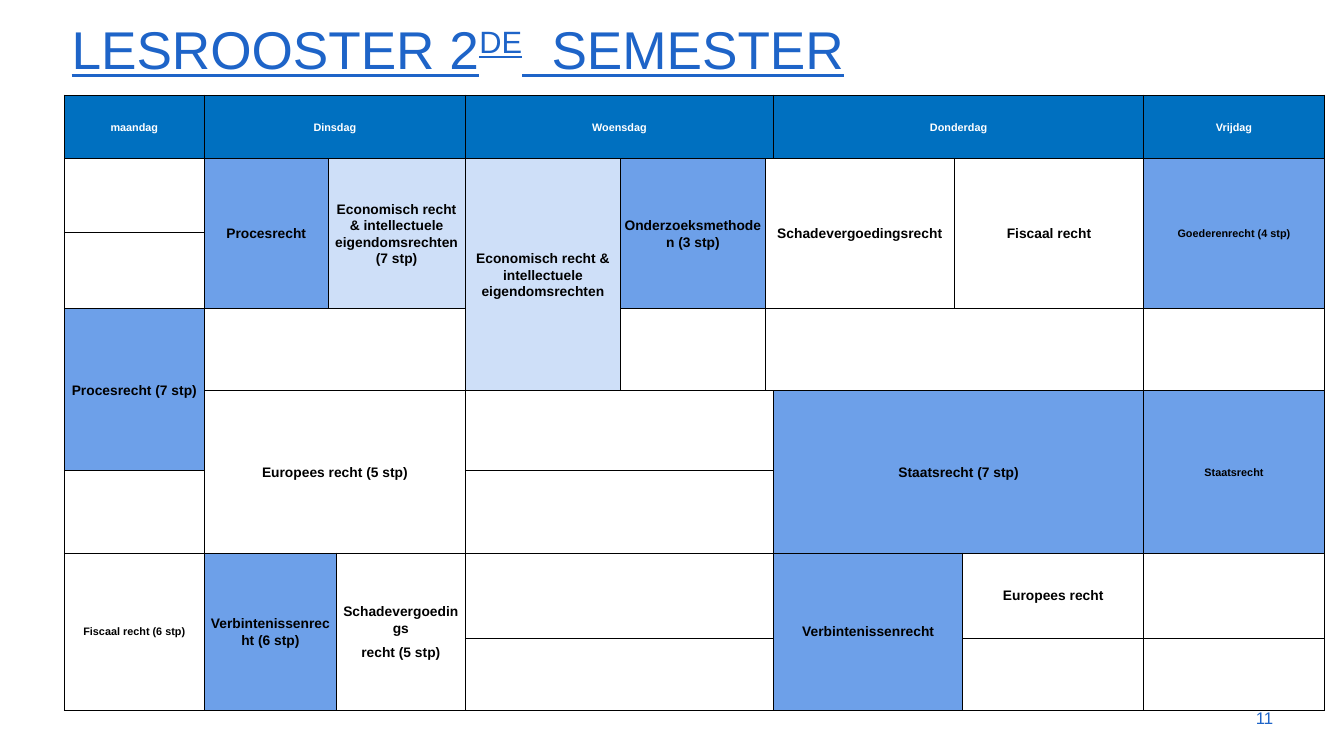
from lxml.etree import SubElement
from pptx import Presentation
from pptx.dml.color import RGBColor
from pptx.enum.text import MSO_ANCHOR, MSO_AUTO_SIZE, PP_ALIGN
from pptx.oxml.ns import qn
from pptx.util import Pt

HEADER_BLUE = RGBColor(0x00, 0x70, 0xC0)
COURSE_BLUE = RGBColor(0x6D, 0xA0, 0xE9)
PALE_BLUE = RGBColor(0xCE, 0xDF, 0xF8)
TITLE_BLUE = RGBColor(0x1E, 0x64, 0xC8)
WHITE = RGBColor(0xFF, 0xFF, 0xFF)
BLACK = RGBColor(0x00, 0x00, 0x00)

TITLE = [("LESROOSTER 2", 0), ("DE", 30), ("  SEMESTER", 0)]
PAGE_NUMBER = "11"

COLUMN_WIDTHS = [142.6, 125.3, 8.6, 131, 157.7, 146.9, 8.6, 183.6, 8.6, 183.6, 183.6]
ROW_HEIGHTS = [64.8, 74.9, 77.4, 83.5, 81.4, 83.5, 86.4, 73.4]

# first column, columns spanned, day
DAYS = [
    (0, 1, "maandag"),
    (1, 3, "Dinsdag"),
    (4, 3, "Woensdag"),
    (7, 3, "Donderdag"),
    (10, 1, "Vrijdag"),
]

# row, column, rows spanned, columns spanned, text, fill (None is clear), text size
COURSES = [
    (1, 1, 2, 1, "Procesrecht", COURSE_BLUE, 14),
    (1, 2, 2, 2, "Economisch recht & intellectuele eigendomsrechten (7 stp)", PALE_BLUE, 14),
    (1, 4, 3, 1, "Economisch recht & intellectuele eigendomsrechten", PALE_BLUE, 14),
    (1, 5, 2, 1, "Onderzoeksmethoden (3 stp)", COURSE_BLUE, 14),
    (1, 6, 2, 2, "Schadevergoedingsrecht", None, 14),
    (1, 8, 2, 2, "Fiscaal recht", None, 14),
    (1, 10, 2, 1, "Goederenrecht (4 stp)", COURSE_BLUE, 11),
    (3, 0, 2, 1, "Procesrecht (7 stp)", COURSE_BLUE, 14),
    (4, 1, 2, 3, "Europees recht (5 stp)", None, 14),
    (4, 7, 2, 3, "Staatsrecht (7 stp)", COURSE_BLUE, 14),
    (4, 10, 2, 1, "Staatsrecht", COURSE_BLUE, 11),
    (6, 0, 2, 1, "Fiscaal recht (6 stp)", None, 11),
    (6, 1, 2, 2, "Verbintenissenrecht (6 stp)", COURSE_BLUE, 14),
    (6, 3, 2, 1, "Schadevergoedings\nrecht (5 stp)", None, 14),
    (6, 7, 2, 2, "Verbintenissenrecht", COURSE_BLUE, 14),
    (6, 9, 1, 1, "Europees recht", None, 14),
]

# row, first column, columns spanned
FREE_SLOTS = [(3, 1, 3), (3, 6, 4)] + [(row, 4, 3) for row in range(4, 8)]


def write(paragraph, text, size, color, bold=False, underline=False,
          baseline=0, align=PP_ALIGN.LEFT, spacing=1.0, after=0):
    paragraph.alignment = align
    paragraph.line_spacing = spacing
    paragraph.space_before = Pt(0)
    paragraph.space_after = Pt(after)
    run = paragraph.add_run()
    run.text = text
    font = run.font
    font.name, font.size, font.bold, font.underline = "Arial", Pt(size), bold, underline
    font.color.rgb = color
    if baseline:
        run._r.get_or_add_rPr().set("baseline", str(baseline * 1000))


def add_borders(cell):
    properties = cell._tc.get_or_add_tcPr()
    for side in ("lnL", "lnR", "lnT", "lnB"):
        line = SubElement(properties, qn(f"a:{side}"), w=str(Pt(1)))
        fill = SubElement(line, qn("a:solidFill"))
        SubElement(fill, qn("a:srgbClr"), val=str(BLACK))


def fill_block(table, row, column, rows, columns, text, fill, size, color=BLACK):
    """Merge the block's cells, colour them and write the text in the middle."""
    cell = table.cell(row, column)
    if rows * columns > 1:
        cell.merge(table.cell(row + rows - 1, column + columns - 1))
    if fill is not None:
        for r in range(row, row + rows):
            for c in range(column, column + columns):
                table.cell(r, c).fill.solid()
                table.cell(r, c).fill.fore_color.rgb = fill
    cell.vertical_anchor = MSO_ANCHOR.MIDDLE
    cell.margin_left = cell.margin_right = Pt(3.6)
    cell.margin_top = cell.margin_bottom = Pt(0)
    frame = cell.text_frame
    for index, line in enumerate(text.split("\n")):
        paragraph = frame.add_paragraph() if index else frame.paragraphs[0]
        write(paragraph, line, size, color, bold=True,
              align=PP_ALIGN.CENTER, spacing=1.07, after=8)


def add_title(slide):
    title = slide.shapes.title
    title.left, title.top, title.width, title.height = Pt(65.5), Pt(19.2), Pt(1301.8), Pt(67.7)
    frame = title.text_frame
    frame.auto_size = MSO_AUTO_SIZE.NONE
    frame.vertical_anchor = MSO_ANCHOR.MIDDLE
    for text, baseline in TITLE:
        write(frame.paragraphs[0], text, 54, TITLE_BLUE, underline=True,
              baseline=baseline, spacing=0.9)


def add_timetable(slide):
    table = slide.shapes.add_table(
        len(ROW_HEIGHTS), len(COLUMN_WIDTHS), Pt(65.2), Pt(96.5),
        Pt(sum(COLUMN_WIDTHS)), Pt(sum(ROW_HEIGHTS))).table
    for column, width in zip(table.columns, COLUMN_WIDTHS):
        column.width = Pt(width)
    for row, height in zip(table.rows, ROW_HEIGHTS):
        row.height = Pt(height)
    for cell in table.iter_cells():
        add_borders(cell)
        cell.fill.background()
    for column, columns, day in DAYS:
        fill_block(table, 0, column, 1, columns, day, HEADER_BLUE, 11, WHITE)
    for course in COURSES:
        fill_block(table, *course)
    for row, column, columns in FREE_SLOTS:
        table.cell(row, column).merge(table.cell(row, column + columns - 1))


def add_page_number(slide):
    frame = slide.shapes.add_textbox(Pt(1227.6), Pt(709), Pt(72.7), Pt(41)).text_frame
    frame.word_wrap = True
    frame.vertical_anchor = MSO_ANCHOR.MIDDLE
    write(frame.paragraphs[0], PAGE_NUMBER, 17.1, TITLE_BLUE, align=PP_ALIGN.RIGHT)


def main():
    presentation = Presentation()
    presentation.slide_width, presentation.slide_height = Pt(1365.1), Pt(768.2)
    slide = presentation.slides.add_slide(presentation.slide_layouts[5])
    add_title(slide)
    add_timetable(slide)
    add_page_number(slide)
    presentation.save("out.pptx")


if __name__ == "__main__":
    main()
